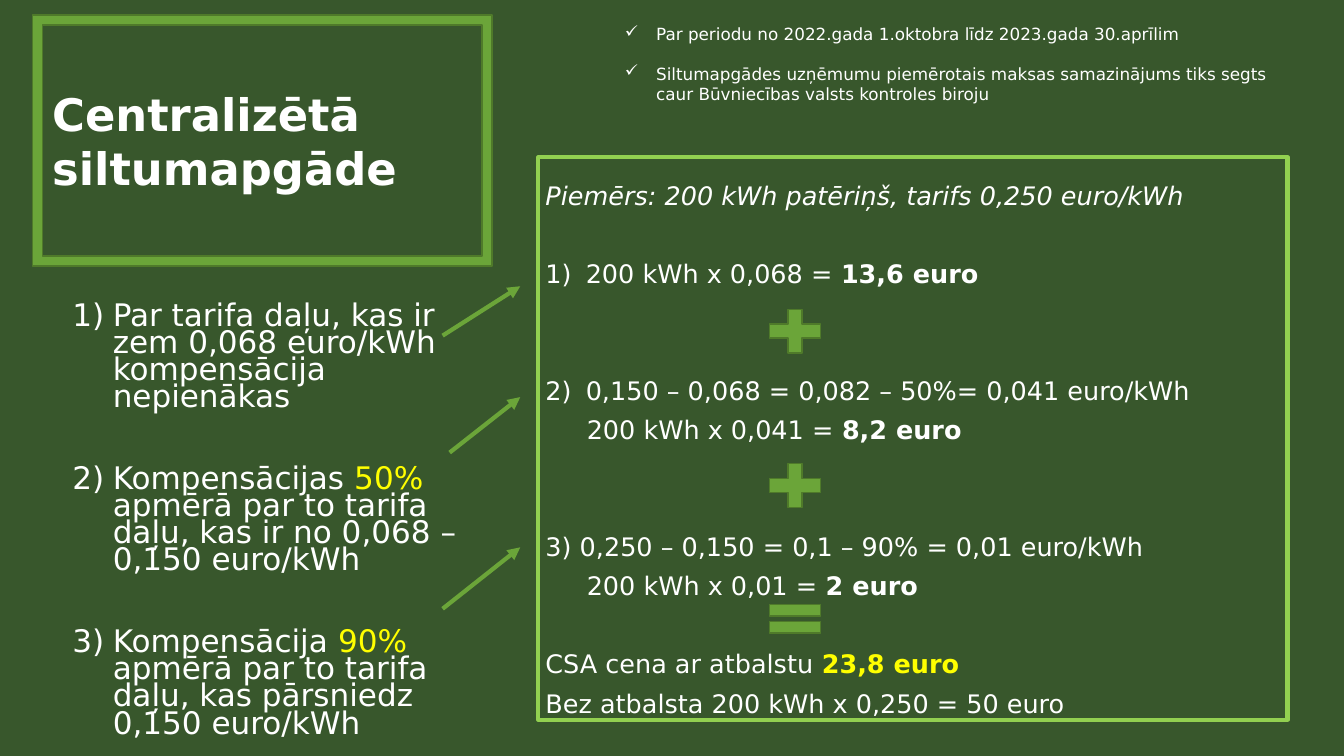
from dataclasses import dataclass

import pptx
import pptx.util
import pptx.dml.color
import pptx.enum.shapes
import pptx.enum.text
import pptx.oxml
import pptx.oxml.ns
from pptx.util import Inches

SHAPE = pptx.enum.shapes.MSO_SHAPE


@dataclass(frozen=True)
class Theme:
    font: str = "DejaVu Sans"
    background: str = "38572C"
    text: str = "FFFFFF"
    highlight: str = "FFFF00"
    accent: str = "6BA539"
    accent_edge: str = "4F7A2A"
    panel_edge: str = "92D050"
    title: float = 32
    rules: float = 22.2
    example: float = 18.2
    notes: float = 12


THEME = Theme()
NUMBER = ("buAutoNum", {"type": "arabicParenR"})
CHECK = ("buChar", {"char": "✓"})


def rgb(value):
    return pptx.dml.color.RGBColor.from_string(value)


def write(p, runs, size, before=0, spacing=1.0, bullet=None, margin=0, hanging=0):
    """Fill a paragraph with (text, *styles) runs; styles are bold, italic and highlight."""
    p.alignment = pptx.enum.text.PP_ALIGN.LEFT
    p.space_before = pptx.util.Pt(before)
    p.line_spacing = spacing
    pPr = p._p.get_or_add_pPr()
    pPr.set("marL", str(Inches(margin)))
    pPr.set("indent", str(-Inches(hanging)))
    if bullet:
        tag, attributes = bullet
        mark = pptx.oxml.parse_xml(f"<a:{tag} {pptx.oxml.ns.nsdecls('a')}/>")
        for name, value in attributes.items():
            mark.set(name, value)
        pPr.append(mark)
    for text, *styles in runs:
        r = p.add_run()
        r.text = text
        r.font.name = THEME.font
        r.font.size = pptx.util.Pt(size)
        r.font.bold = "bold" in styles
        r.font.italic = "italic" in styles
        r.font.color.rgb = rgb(THEME.highlight if "highlight" in styles else THEME.text)


def next_paragraph(tf, index):
    return tf.paragraphs[0] if index == 0 else tf.add_paragraph()


def add_list(s, box, items, size, bullet, hanging, gap, spacing=1.0):
    tf = s.shapes.add_textbox(*map(Inches, box)).text_frame
    tf.word_wrap = True
    for i, runs in enumerate(items):
        write(next_paragraph(tf, i), runs, size, gap if i else 0, spacing,
              bullet, hanging, hanging)


def add_shape(s, kind, box, fill, edge, width):
    sp = s.shapes.add_shape(kind, *map(Inches, box))
    sp.shadow.inherit = False
    if fill:
        sp.fill.solid()
        sp.fill.fore_color.rgb = rgb(fill)
    else:
        sp.fill.background()
    sp.line.color.rgb = rgb(edge)
    sp.line.width = pptx.util.Pt(width)
    return sp


def add_arrow(s, x1, y1, x2, y2):
    arrow = s.shapes.add_connector(pptx.enum.shapes.MSO_CONNECTOR.STRAIGHT,
                                   *map(Inches, (x1, y1, x2, y2)))
    arrow.line.color.rgb = rgb(THEME.accent)
    arrow.line.width = pptx.util.Pt(3)
    ns = pptx.oxml.ns.nsdecls("a")
    arrow.line._get_or_add_ln().append(
        pptx.oxml.parse_xml(f'<a:tailEnd {ns} type="triangle"/>'))
    arrow._element.spPr.append(pptx.oxml.parse_xml(f"<a:effectLst {ns}/>"))


def add_title(s, text):
    sp = add_shape(s, SHAPE.FRAME, (0.32, 0.15, 4.56, 2.49),
                   THEME.accent, THEME.accent_edge, 1)
    sp.adjustments[0] = 0.04
    tf = sp.text_frame
    tf.word_wrap = True
    tf.vertical_anchor = pptx.enum.text.MSO_ANCHOR.MIDDLE
    write(tf.paragraphs[0], [(text, "bold")], THEME.title)


def add_example(s, lines):
    """Draw the outlined calculation; each line is (rows down, layout, runs)."""
    row, gap = 27.6, 10
    layouts = {
        "plain": {},
        "numbered": {"bullet": NUMBER, "margin": 0.4, "hanging": 0.4},
        "indented": {"margin": 0.41},
    }
    sp = add_shape(s, SHAPE.RECTANGLE, (5.34, 1.56, 7.43, 5.58), None, THEME.panel_edge, 3)
    tf = sp.text_frame
    tf.word_wrap = True
    tf.vertical_anchor = pptx.enum.text.MSO_ANCHOR.TOP
    tf.margin_left = tf.margin_right = Inches(0.07)
    tf.margin_top, tf.margin_bottom = Inches(0.28), Inches(0.04)
    for i, (rows, layout, runs) in enumerate(lines):
        before = gap + (rows - 1) * row if rows else 0
        write(next_paragraph(tf, i), runs, THEME.example, before, 0.83, **layouts[layout])


def main():
    prs = pptx.Presentation()
    prs.slide_width, prs.slide_height = Inches(13.33), Inches(7.5)
    s = prs.slides.add_slide(prs.slide_layouts[6])
    s.background.fill.solid()
    s.background.fill.fore_color.rgb = rgb(THEME.background)

    rules = [
        [("Par tarifa daļu, kas ir zem 0,068 euro/kWh kompensācija nepienākas",)],
        [("Kompensācijas ",), ("50% ", "highlight"),
         ("apmērā par to tarifa daļu, kas ir no 0,068 – 0,150 euro/kWh",)],
        [("Kompensācija ",), ("90%", "highlight"),
         (" apmērā par to tarifa daļu, kas pārsniedz 0,150 euro/kWh",)],
    ]
    add_list(s, (0.62, 2.97, 4.18, 4.5), rules, THEME.rules, NUMBER, 0.4, 38.8, 0.73)

    add_example(s, [
        (0, "plain", [("Piemērs: 200 kWh patēriņš, tarifs 0,250 euro/kWh", "italic")]),
        (2, "numbered", [("200 kWh x 0,068 = ",), ("13,6 euro", "bold")]),
        (3, "numbered", [("0,150 – 0,068 = 0,082 – 50%= 0,041 euro/kWh",)]),
        (1, "indented", [("200 kWh x 0,041 = ",), ("8,2 euro", "bold")]),
        (3, "plain", [("3) 0,250 – 0,150 = 0,1 – 90% = 0,01 euro/kWh",)]),
        (1, "indented", [("200 kWh x 0,01 = ",), ("2 euro", "bold")]),
        (2, "plain", [("CSA cena ar atbalstu ",), ("23,8 euro", "bold", "highlight")]),
        (1, "plain", [("Bez atbalsta 200 kWh x 0,250 = 50 euro",)]),
    ])

    for kind, top, height in ((SHAPE.MATH_PLUS, 2.99, 0.59),
                              (SHAPE.MATH_PLUS, 4.52, 0.59),
                              (SHAPE.MATH_EQUAL, 5.9, 0.48)):
        add_shape(s, kind, (7.54, top, 0.69, height), THEME.accent, THEME.accent_edge, 1)

    for x, y, tip in ((4.39, 3.33, 2.84), (4.46, 4.49, 3.94), (4.39, 6.04, 5.43)):
        add_arrow(s, x, y, 5.16, tip)

    add_title(s, "Centralizētā siltumapgāde")
    notes = [
        [("Par periodu no 2022.gada 1.oktobra līdz 2023.gada 30.aprīlim",)],
        [("Siltumapgādes uzņēmumu piemērotais maksas samazinājums tiks segts "
          "caur Būvniecības valsts kontroles biroju",)],
    ]
    add_list(s, (6.1, 0.19, 6.67, 1.21), notes, THEME.notes, CHECK, 0.31, 14)
    prs.save("out.pptx")


if __name__ == "__main__":
    main()
